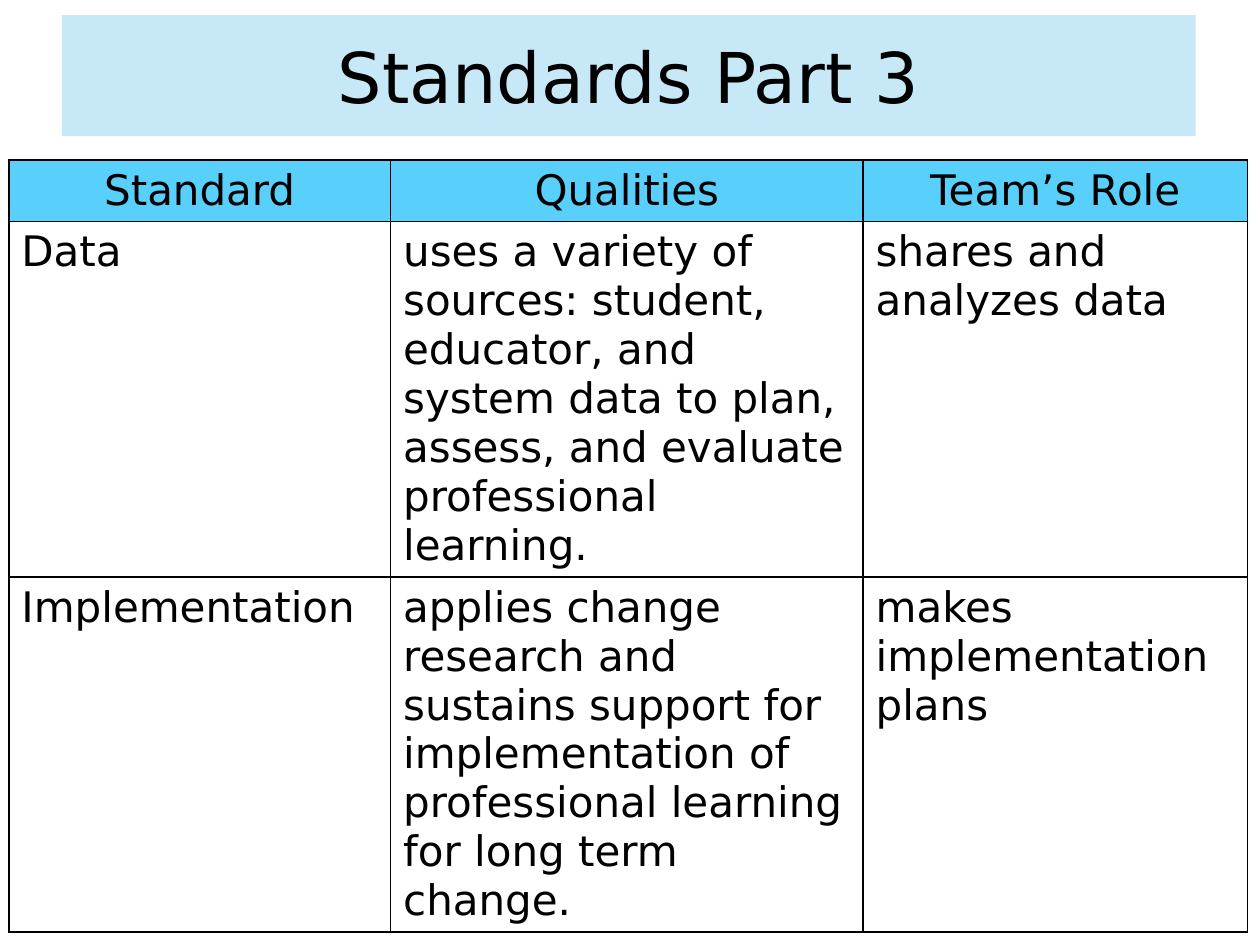
from lxml.etree import SubElement
from pptx import Presentation
from pptx.dml.color import RGBColor
from pptx.enum.text import MSO_ANCHOR, MSO_AUTO_SIZE, PP_ALIGN
from pptx.oxml.ns import qn
from pptx.util import Inches, Pt

FONT = "DejaVu Sans"
ROWS = [
    ("Standard", "Qualities", "Team’s Role"),
    ("Data",
     "uses a variety of sources: student, educator, and system data to plan, "
     "assess, and evaluate professional learning.",
     "shares and analyzes data"),
    ("Implementation",
     "applies change research and sustains support for implementation of "
     "professional learning for long term change.",
     "makes implementation plans"),
]
COL_WIDTHS = (3.03, 3.75, 3.05)
ROW_HEIGHTS = (0.48, 2.82, 2.82)


def color(value):
    return RGBColor.from_string(value)


def set_attrs(obj, values):
    for name, value in values.items():
        setattr(obj, name, value)


def write(tf, text, size, align):
    tf.text = text
    p = tf.paragraphs[0]
    p.alignment = align
    font = p.runs[0].font
    set_attrs(font, {"name": FONT, "size": Pt(size), "bold": False})
    font.color.rgb = color("000000")


def add_borders(cell):
    tc_pr = cell._tc.get_or_add_tcPr()
    for side in ("a:lnL", "a:lnR", "a:lnT", "a:lnB"):
        ln = SubElement(tc_pr, qn(side), w=str(Pt(1)))
        fill = SubElement(ln, qn("a:solidFill"))
        SubElement(fill, qn("a:srgbClr"), val="000000")


def place_title(slide, box):
    sp = slide.shapes.title
    set_attrs(sp, dict(zip(("left", "top", "width", "height"), map(Inches, box))))
    sp.fill.solid()
    sp.fill.fore_color.rgb = color("A9DCF2")
    srgb = next(sp._element.spPr.iter(qn("a:srgbClr")))
    SubElement(srgb, qn("a:alpha"), val="65000")
    tf = sp.text_frame
    set_attrs(tf, {"vertical_anchor": MSO_ANCHOR.MIDDLE, "word_wrap": True,
                   "auto_size": MSO_AUTO_SIZE.NONE})
    write(tf, "Standards Part 3", 40, PP_ALIGN.CENTER)


def place_table(slide, left, top):
    box = (left, top, sum(COL_WIDTHS), sum(ROW_HEIGHTS))
    table = slide.shapes.add_table(len(ROWS), len(COL_WIDTHS), *map(Inches, box)).table
    set_attrs(table, {"first_row": False, "horz_banding": False})
    for col, width in zip(table.columns, COL_WIDTHS):
        col.width = Inches(width)
    for i, (row, height, texts) in enumerate(zip(table.rows, ROW_HEIGHTS, ROWS)):
        row.height = Inches(height)
        for cell, text in zip(row.cells, texts):
            add_borders(cell)
            if i == 0:
                cell.fill.solid()
                cell.fill.fore_color.rgb = color("59D0FB")
            else:
                cell.fill.background()
            write(cell.text_frame, text, 24, PP_ALIGN.LEFT if i else PP_ALIGN.CENTER)


def main():
    prs = Presentation()
    set_attrs(prs, {"slide_width": Inches(10), "slide_height": Inches(7.5)})
    slide = prs.slides.add_slide(prs.slide_layouts.get_by_name("Title Only"))
    place_title(slide, (0.49, 0.12, 9, 0.96))
    place_table(slide, 0.07, 1.27)
    prs.save("out.pptx")


if __name__ == "__main__":
    main()
